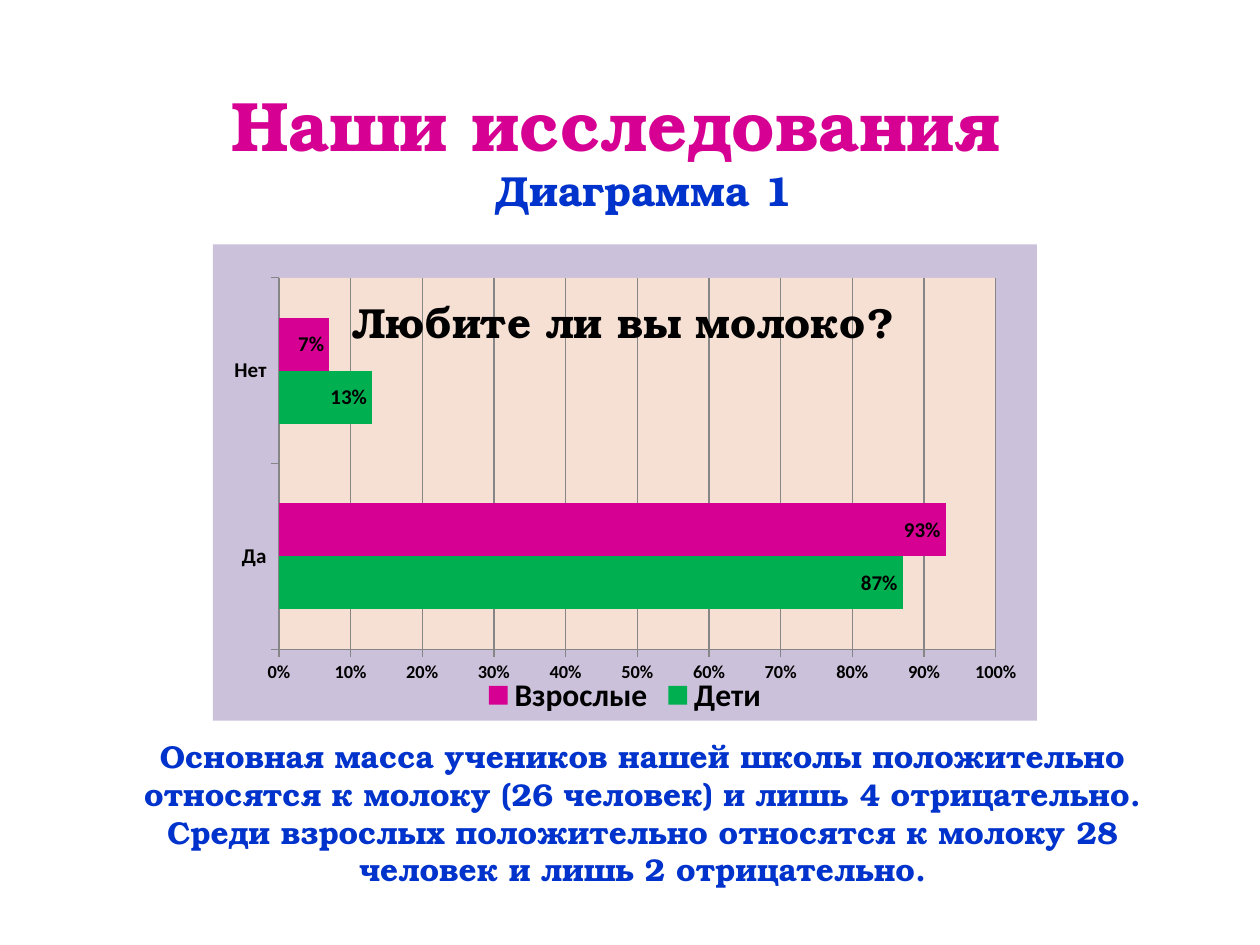
import lxml.etree
import pptx
import pptx.chart.data
import pptx.dml.color
import pptx.enum.chart
import pptx.enum.text
import pptx.oxml.ns
import pptx.util

Inches, Pt = pptx.util.Inches, pptx.util.Pt
qn = pptx.oxml.ns.qn

THEME = {
    "heading_font": "TeX Gyre Bonum", "chart_font": "Calibri",
    "pink": "D60093", "blue": "0033CC", "green": "00B050", "black": "000000",
    "chart_fill": "CCC1DA", "plot_fill": "F5E0D3", "line": "868686",
    "title": 40, "subtitle": 24, "body": 18, "legend": 18,
    "label": 12, "scale": 10.5, "chart_text": 10,
}

# text, (left, top, width, height), size, colour, wrap
TEXTS = [
    ("Наши исследования", (1.69, 0.6, 6.39, 0.77), "title", "pink", False),
    ("Диаграмма 1", (3.69, 1.26, 2.84, 0.5), "subtitle", "blue", False),
    ("Основная масса учеников нашей школы положительно относятся к молоку "
     "(26 человек) и лишь 4 отрицательно. Среди взрослых положительно "
     "относятся к молоку 28 человек и лишь 2 отрицательно.",
     (0.71, 5.8, 8.78, 1.31), "body", "blue", True),
]
QUESTION = "Любите ли вы молоко?"
ANSWERS = ["Да", "Нет"]
SERIES = [("Дети", (0.87, 0.13), "green"), ("Взрослые", (0.93, 0.07), "pink")]
CHART_BOX = (1.69, 1.94, 6.54, 3.78)
PLOT_LAYOUT = {"x": 0.08, "y": 0.07, "w": 0.87, "h": 0.78}
TITLE_LAYOUT = {"x": 0.16, "y": 0.07}


def rgb(name):
    return pptx.dml.color.RGBColor.from_string(THEME[name])


def style_font(font, size, color="black", face="chart_font", bold=True):
    font.size, font.bold, font.name = Pt(THEME[size]), bold, THEME[face]
    font.color.rgb = rgb(color)


def add_text(slide, text, box, size, color, wrap):
    tf = slide.shapes.add_textbox(*map(Inches, box)).text_frame
    tf.word_wrap = wrap
    tf.text = text
    p = tf.paragraphs[0]
    p.alignment = pptx.enum.text.PP_ALIGN.CENTER
    style_font(p.runs[0].font, size, color, "heading_font")


def sub(parent, tag, **attributes):
    return lxml.etree.SubElement(parent, qn(tag), attributes)


def set_layout(parent, index, fractions):
    """Place a chart part by fractions of the chart's size."""
    for old in parent.findall(qn("c:layout")):
        parent.remove(old)
    layout = parent.makeelement(qn("c:layout"), {})
    parent.insert(index, layout)
    manual = sub(layout, "c:manualLayout")
    if "w" in fractions:
        sub(manual, "c:layoutTarget", val="inner")
    for key in ("x", "y"):
        sub(manual, f"c:{key}Mode", val="edge")
    for key, value in fractions.items():
        sub(manual, f"c:{key}", val=str(value))


def add_fill(parent, color):
    """Append a solid fill to a chart part that has no fill of its own."""
    fill = sub(sub(parent, "c:spPr"), "a:solidFill")
    sub(fill, "a:srgbClr", val=THEME[color])
    return parent[-1]


def style_axes(chart):
    cross = pptx.enum.chart.XL_TICK_MARK.OUTSIDE
    for axis, size in ((chart.category_axis, "label"), (chart.value_axis, "scale")):
        axis.major_tick_mark = cross
        axis.format.line.color.rgb = rgb("line")
        style_font(axis.tick_labels.font, size)
    axis = chart.value_axis
    axis.minimum_scale, axis.maximum_scale, axis.major_unit = 0, 1, 0.1
    axis.has_major_gridlines = True
    axis.major_gridlines.format.line.color.rgb = rgb("line")
    axis.tick_labels.number_format = "0%"
    axis.tick_labels.number_format_is_linked = False


def style_series(plot):
    plot.gap_width, plot.overlap, plot.vary_by_categories = 150, 0, False
    for series, (_, _, color) in zip(plot.series, SERIES):
        series.format.fill.solid()
        series.format.fill.fore_color.rgb = rgb(color)
        labels = series.data_labels
        labels.show_value = True
        labels.number_format, labels.number_format_is_linked = "0%", False
        labels.position = pptx.enum.chart.XL_LABEL_POSITION.INSIDE_END
        style_font(labels.font, "label")


def add_title(chart):
    chart.has_title = True
    title = chart.chart_title
    title.text_frame.text = QUESTION
    style_font(title.text_frame.paragraphs[0].runs[0].font, "subtitle",
               face="heading_font")
    set_layout(title.element, 1, TITLE_LAYOUT)
    title.element.find(qn("c:overlay")).set("val", "1")


def add_survey_chart(slide):
    data = pptx.chart.data.CategoryChartData(number_format="0%")
    data.categories = ANSWERS
    for name, values, _ in SERIES:
        data.add_series(name, values)
    chart = slide.shapes.add_chart(
        pptx.enum.chart.XL_CHART_TYPE.BAR_CLUSTERED,
        *map(Inches, CHART_BOX), data).chart
    style_font(chart.font, "chart_text", bold=False)
    style_axes(chart)
    style_series(chart.plots[0])
    add_title(chart)

    chart.has_legend = True
    chart.legend.position = pptx.enum.chart.XL_LEGEND_POSITION.BOTTOM
    chart.legend.include_in_layout = False
    style_font(chart.legend.font, "legend")

    root = chart.element
    plot_area = root.find(".//" + qn("c:plotArea"))
    set_layout(plot_area, 0, PLOT_LAYOUT)
    add_fill(plot_area, "plot_fill")
    background = add_fill(root, "chart_fill")
    sub(sub(background, "a:ln"), "a:noFill")
    root.find(qn("c:chart")).addnext(background)


def main():
    prs = pptx.Presentation()
    prs.slide_width, prs.slide_height = Inches(10), Inches(7.5)
    slide = prs.slides.add_slide(prs.slide_layouts[6])
    for text in TEXTS:
        add_text(slide, *text)
    add_survey_chart(slide)
    prs.save("out.pptx")


if __name__ == "__main__":
    main()
